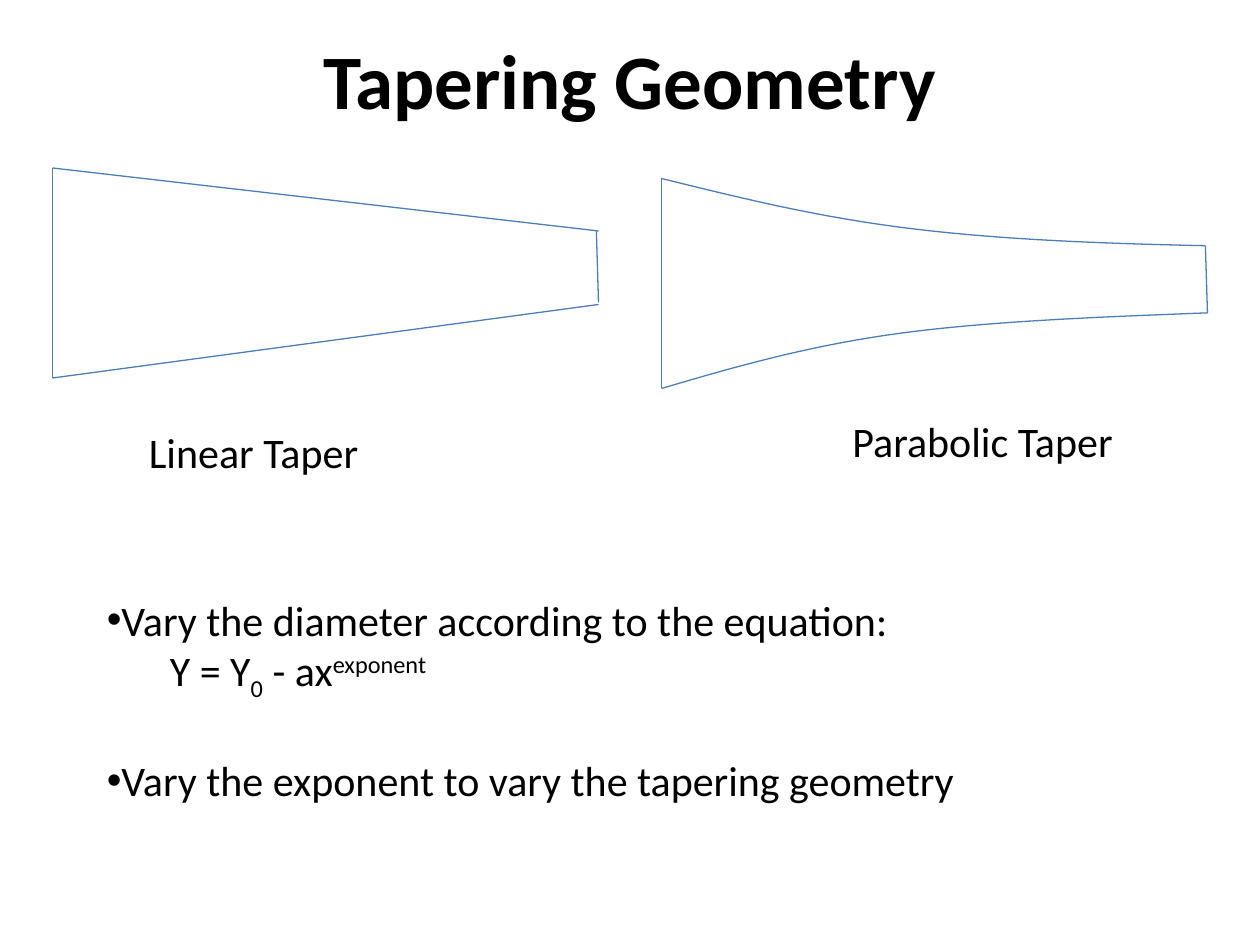
from lxml.etree import SubElement
from pptx import Presentation
from pptx.dml.color import RGBColor
from pptx.enum.shapes import MSO_CONNECTOR
from pptx.enum.text import MSO_ANCHOR, PP_ALIGN
from pptx.oxml.ns import qn
from pptx.util import Inches, Pt

BLACK = RGBColor(0x00, 0x00, 0x00)
BLUE = RGBColor(0x4B, 0x7E, 0xBC)
FONT = "Calibri"
CURVE_STEPS = 24

presentation = Presentation()
presentation.slide_width = Inches(10)
presentation.slide_height = Inches(7.5)
slide = presentation.slides.add_slide(presentation.slide_layouts[6])
CELL = presentation.slide_width / 120


def grid(*cells):
    return [round(cell * CELL) for cell in cells]


def add_text(cells, lines, size=24, bold=False, wrap=True):
    text_frame = slide.shapes.add_textbox(*grid(*cells)).text_frame
    text_frame.word_wrap = wrap
    text_frame.text = "\n".join(lines)
    for paragraph in text_frame.paragraphs:
        paragraph.font.size = Pt(size)
        for run in paragraph.runs:
            run.font.name = FONT
            run.font.size = Pt(size)
            run.font.bold = bold
            run.font.color.rgb = BLACK
    return text_frame


title = add_text((6, 0, 108, 15), ["Tapering Geometry"], size=44, bold=True)
title.vertical_anchor = MSO_ANCHOR.MIDDLE
title.paragraphs[0].alignment = PP_ALIGN.CENTER

straight_edges = [
    (63, 17, 63, 37),
    (114.8, 23.4, 115, 29.8),
    (5, 16, 5, 36),
    (56.8, 22, 57, 28.8),
    (5, 16, 57, 22),
    (5, 36, 57, 29),
]
for edge in straight_edges:
    connector = slide.shapes.add_connector(MSO_CONNECTOR.STRAIGHT, *grid(*edge))
    connector.line.color.rgb = BLUE
    connector.line.width = Pt(0.75)
    SubElement(connector._element.spPr, qn("a:effectLst"))

parabolic_edges = [
    [(63, 17), (70.3, 18.8), (77.5, 20.6), (86.2, 21.7),
     (94.8, 22.8), (104.8, 23.2), (114.8, 23.4)],
    [(63, 37), (69.8, 35), (76.7, 33), (85.3, 31.8),
     (94, 30.6), (104.5, 30.2), (115, 29.8)],
]
for controls in parabolic_edges:
    points = []
    for first in (0, 3):
        for step in range(1, CURVE_STEPS + 1):
            t = step / CURVE_STEPS
            weights = ((1 - t) ** 3, 3 * t * (1 - t) ** 2, 3 * t**2 * (1 - t), t**3)
            segment = controls[first:first + 4]
            points.append(grid(*(
                sum(weight * point[axis] for weight, point in zip(weights, segment))
                for axis in (0, 1)
            )))
    builder = slide.shapes.build_freeform(*grid(*controls[0]))
    builder.add_line_segments(points, close=False)
    curve = builder.convert_to_shape()
    curve.shadow.inherit = False
    curve.fill.background()
    curve.line.color.rgb = BLUE
    curve.line.width = Pt(0.75)

add_text((13, 40, 43, 6), ["Linear Taper"])
add_text((80, 39, 27.5, 6), ["Parabolic Taper"], wrap=False)

body = add_text((9, 56, 102, 20.6), [
    "Vary the diameter according to the equation:",
    "",
    "Vary the exponent to vary the tapering geometry",
])
diameter, equation, exponent = body.paragraphs
for paragraph in (diameter, exponent):
    properties = paragraph._p.get_or_add_pPr()
    SubElement(properties, qn("a:buFont"), typeface="Arial")
    SubElement(properties, qn("a:buChar"), char="•")
exponent.space_before = Pt(30)

equation.level = 1
equation._p.get_or_add_pPr().set("marL", str(Inches(0.5)))
equation._p.get_or_add_pPr().set("indent", "0")
for text, baseline in [("Y = Y", 0), ("0", -25000), (" - ax", 0), ("exponent", 30000)]:
    run = equation.add_run()
    run.text = text
    run.font.name = FONT
    run.font.size = Pt(24)
    run.font.color.rgb = BLACK
    run.font._element.set("baseline", str(baseline))

presentation.save("out.pptx")
